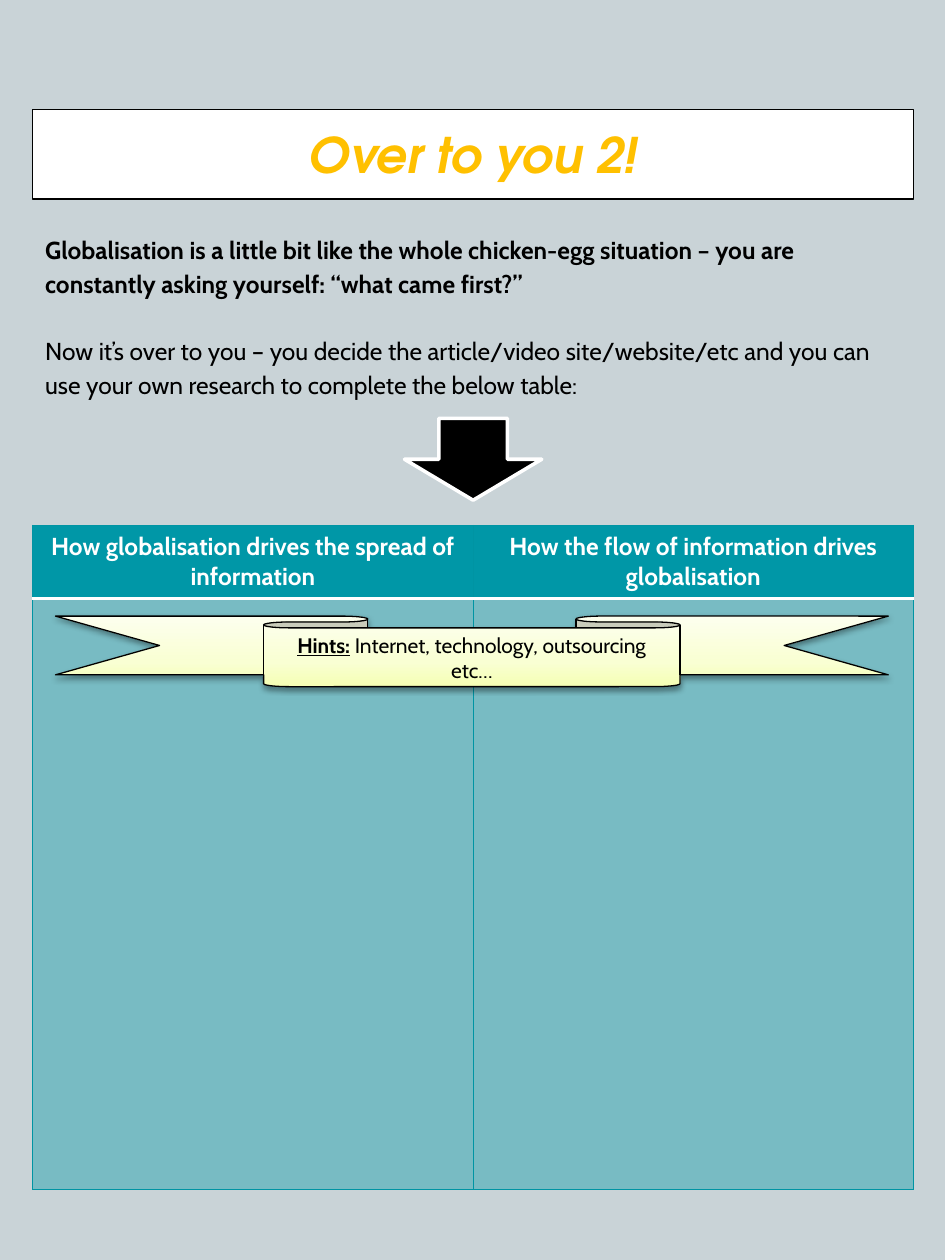
from copy import deepcopy

from lxml import etree
from pptx import Presentation
from pptx.dml.color import RGBColor
from pptx.enum.shapes import MSO_SHAPE as Shape
from pptx.enum.text import MSO_ANCHOR as Anchor, PP_ALIGN as Align
from pptx.oxml import parse_xml
from pptx.oxml.ns import nsdecls, qn
from pptx.util import Inches, Pt

BACKGROUND = RGBColor(0xC9, 0xD3, 0xD7)
BLACK = RGBColor(0, 0, 0)
WHITE = RGBColor(0xFF, 0xFF, 0xFF)
GOLD = RGBColor(0xFF, 0xC0, 0x00)
TEAL = RGBColor(0x00, 0x97, 0xA7)
TEAL_LINE = RGBColor(0x00, 0x94, 0xA3)
RIBBON_STOPS = [
    (0, RGBColor(0xF5, 0xFF, 0xB3)),
    (0.35, RGBColor(0xF9, 0xFF, 0xD3)),
    (1, RGBColor(0xFD, 0xFF, 0xEE)),
]
BODY_FONT = "Cabin"
TITLE_FONT = "TeX Gyre Adventor"
LEFT, WIDTH = 0.26, 6.99


def style_font(font, size, color, name=BODY_FONT, bold=False):
    font.name, font.size, font.bold = name, Pt(size), bold
    font.color.rgb = color


def set_insets(frame, inset):
    frame.margin_left = frame.margin_right = Inches(inset)
    frame.margin_top = frame.margin_bottom = Inches(inset)


def add_figure(slide, kind, left, top, width, height, line, line_width):
    figure = slide.shapes.add_shape(
        kind, Inches(left), Inches(top), Inches(width), Inches(height))
    figure.shadow.inherit = False
    figure.line.color.rgb = line
    figure.line.width = Pt(line_width)
    return figure


def add_title(slide, text):
    title = add_figure(slide, Shape.RECTANGLE, LEFT, 0.87, WIDTH, 0.71, BLACK, 0.75)
    title.fill.solid()
    title.fill.fore_color.rgb = WHITE
    frame = title.text_frame
    set_insets(frame, 0.1)
    frame.vertical_anchor = Anchor.MIDDLE
    frame.text = text
    paragraph = frame.paragraphs[0]
    paragraph.alignment = Align.CENTER
    font = paragraph.runs[0].font
    style_font(font, 28, GOLD, TITLE_FONT, bold=True)
    font.italic = True


def add_intro(slide, lead, task):
    intro = slide.shapes.add_textbox(
        Inches(LEFT), Inches(1.73), Inches(WIDTH), Inches(1.55))
    frame = intro.text_frame
    frame.word_wrap = True
    set_insets(frame, 0.1)
    frame.text = f"{lead}\n{task}"
    for paragraph, bold in zip(frame.paragraphs, (True, False)):
        paragraph.line_spacing = 1.15
        style_font(paragraph.runs[0].font, 14, BLACK, bold=bold)
    frame.paragraphs[1].space_before = Pt(19.3)


def add_arrow(slide):
    arrow = add_figure(slide, Shape.DOWN_ARROW, 3.21, 3.32, 1.09, 0.65, WHITE, 2)
    arrow.fill.solid()
    arrow.fill.fore_color.rgb = BLACK


def style_cell(cell, edges, opacity=100):
    """Set the borders, given as {tag: (colour, points)}, and the fill."""
    properties = cell._tc.get_or_add_tcPr()
    for tag, (color, width) in edges.items():
        properties.append(parse_xml(
            f'<a:{tag} {nsdecls("a")} w="{Pt(width)}"><a:solidFill>'
            f'<a:srgbClr val="{color}"/></a:solidFill></a:{tag}>'))
    cell.fill.solid()
    cell.fill.fore_color.rgb = TEAL
    if opacity < 100:
        color = properties.find(qn("a:solidFill")).find(qn("a:srgbClr"))
        etree.SubElement(color, qn("a:alpha"), val=str(opacity * 1000))


def add_answer_table(slide, headings):
    row_heights = (0.58, 4.69)
    table = slide.shapes.add_table(
        2, len(headings), Inches(LEFT), Inches(4.17),
        Inches(WIDTH), Inches(sum(row_heights))).table
    for row, height in zip(table.rows, row_heights):
        row.height = Inches(height)

    thin, thick = (TEAL_LINE, 0.75), (WHITE, 2)
    for column, heading in enumerate(headings):
        header, answer = table.cell(0, column), table.cell(1, column)
        header.text = heading
        paragraph = header.text_frame.paragraphs[0]
        paragraph.alignment = Align.CENTER
        style_font(paragraph.runs[0].font, 14, WHITE, bold=True)
        sides = {"lnL": thin, "lnR": thin}
        style_cell(header, {**sides, "lnT": thin, "lnB": thick})
        style_cell(answer, {**sides, "lnT": thick, "lnB": thin}, opacity=40)


def add_hint_ribbon(slide, label, hints):
    ribbon = add_figure(slide, Shape.DOWN_RIBBON, 0.44, 4.89, 6.61, 0.56, BLACK, 0.75)

    # Gradient, palest at the top
    fill = ribbon.fill
    fill.gradient()
    fill.gradient_angle = 90
    stop_list = ribbon._element.spPr.find(qn("a:gradFill")).find(qn("a:gsLst"))
    stop_list.append(deepcopy(stop_list[-1]))
    for stop, (position, color) in zip(fill.gradient_stops, RIBBON_STOPS):
        stop.position = position
        stop.color.rgb = color

    # Soft shadow below
    effects = ribbon._element.spPr.find(qn("a:effectLst"))
    effects.append(parse_xml(
        f'<a:outerShdw {nsdecls("a")} blurRad="{Pt(3.1)}" dist="{Pt(1.6)}" '
        f'dir="5400000" rotWithShape="0"><a:srgbClr val="{BLACK}">'
        '<a:alpha val="38000"/></a:srgbClr></a:outerShdw>'))

    frame = ribbon.text_frame
    frame.vertical_anchor = Anchor.MIDDLE
    paragraph = frame.paragraphs[0]
    paragraph.alignment = Align.CENTER
    for text, is_label in ((label, True), (hints, False)):
        run = paragraph.add_run()
        run.text = text
        style_font(run.font, 12, BLACK, bold=is_label)
        run.font.underline = is_label


def main():
    deck = Presentation()
    deck.slide_width, deck.slide_height = Inches(7.5), Inches(10)
    slide = deck.slides.add_slide(deck.slide_layouts[6])
    slide.background.fill.solid()
    slide.background.fill.fore_color.rgb = BACKGROUND

    add_intro(
        slide,
        "Globalisation is a little bit like the whole chicken-egg situation – "
        "you are constantly asking yourself: “what came first?”",
        "Now it’s over to you – you decide the article/video site/website/etc "
        "and you can use your own research to complete the below table:")
    add_title(slide, "Over to you 2!")
    add_arrow(slide)
    add_answer_table(slide, (
        "How globalisation drives the spread of information",
        "How the flow of information drives globalisation"))
    add_hint_ribbon(slide, "Hints:", " Internet, technology, outsourcing etc…")

    deck.save("out.pptx")


if __name__ == "__main__":
    main()
